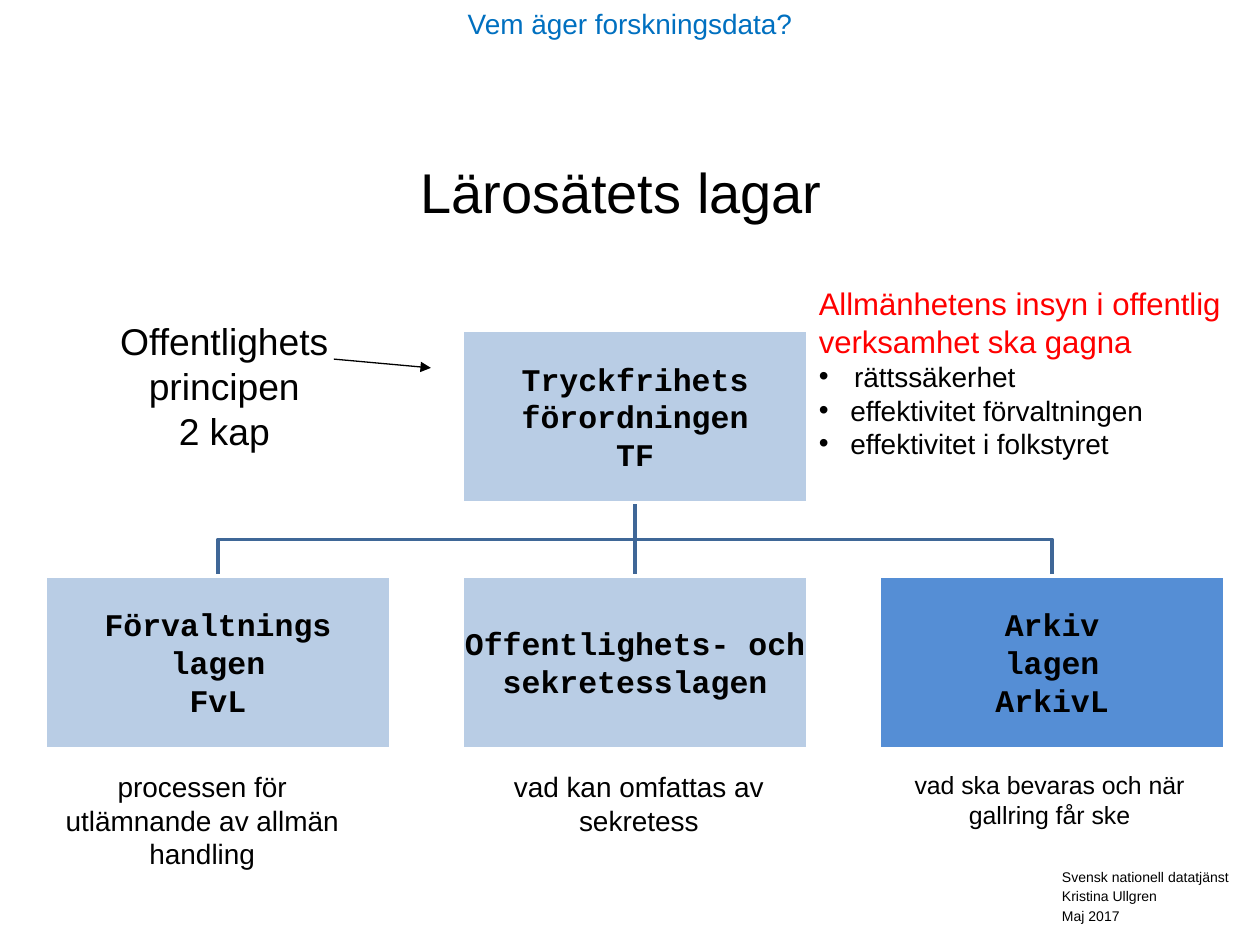
from pptx import Presentation, util as u
from pptx.dml.color import RGBColor
from pptx.enum import shapes, text
from pptx.oxml.ns import qn
from lxml import etree

BLACK, WHITE, RED, BLUE = "000000", "FFFFFF", "FF0000", "0070C0"
PALE, STRONG, BRANCH = "B9CDE5", "558ED5", "3F6797"
CENTER, LEFT = text.PP_ALIGN.CENTER, text.PP_ALIGN.LEFT


def color(value):
    """Turn a hex string into a colour."""
    return RGBColor.from_string(value)


class Page:
    """Hold the slide and draw each kind of element in one style."""

    def __init__(self, deck):
        """Add a title-only slide to the deck."""
        self.slide = deck.slides.add_slide(deck.slide_layouts[5])
        self.items = self.slide.shapes

    def font(self, para, size, ink=BLACK, name="Arial", bold=False):
        """Set the font of a paragraph."""
        para.font.size = u.Pt(size)
        para.font.name = name
        para.font.bold = bold
        para.font.color.rgb = color(ink)

    def fill_text(self, frame, lines, size, align=CENTER, gap=0, **style):
        """Fill a text frame with one paragraph a line."""
        frame.word_wrap = True
        for index, line in enumerate(lines):
            para = frame.add_paragraph() if index else frame.paragraphs[0]
            para.text = line
            para.alignment = align
            para.space_before = u.Pt(gap if index else 0)
            self.font(para, size, **style)

    def title(self, line, left, top, width, height, size):
        """Move and format the title placeholder."""
        box = self.items.title
        box.left, box.top = u.Inches(left), u.Inches(top)
        box.width, box.height = u.Inches(width), u.Inches(height)
        box.text_frame.vertical_anchor = text.MSO_ANCHOR.MIDDLE
        self.fill_text(box.text_frame, [line], size)

    def label(self, lines, left, top, width, height, size, **style):
        """Add a text box."""
        box = self.items.add_textbox(*map(u.Inches, (left, top, width, height)))
        self.fill_text(box.text_frame, lines, size, **style)
        return box.text_frame

    def bullet(self, frame, line, indent, size):
        """Append a bulleted paragraph."""
        para = frame.add_paragraph()
        para.text = line
        props = para._p.get_or_add_pPr()
        props.set("marL", str(u.Inches(indent)))
        props.set("indent", str(-u.Inches(indent)))
        etree.SubElement(props, qn("a:buFont")).set("typeface", "Arial")
        etree.SubElement(props, qn("a:buChar")).set("char", "•")
        self.font(para, size)

    def law(self, lines, left, top, width, height, fill):
        """Add a filled law box."""
        box = self.items.add_shape(
            shapes.MSO_SHAPE.RECTANGLE, *map(u.Inches, (left, top, width, height)))
        box.shadow.inherit = False
        box.fill.solid()
        box.fill.fore_color.rgb = color(fill)
        box.line.color.rgb = color(WHITE)
        box.line.width = u.Pt(2)
        frame = box.text_frame
        frame.margin_left = frame.margin_right = u.Inches(0.01)
        frame.margin_top = frame.margin_bottom = u.Inches(0.01)
        frame.vertical_anchor = text.MSO_ANCHOR.MIDDLE
        self.fill_text(frame, lines, 18, name="Courier New", bold=True)

    def line(self, start, end, ink, width, arrow=False):
        """Add a straight line, with an arrowhead if asked."""
        link = self.items.add_connector(
            shapes.MSO_CONNECTOR.STRAIGHT, *map(u.Inches, (*start, *end)))
        link.line.color.rgb = color(ink)
        link.line.width = u.Pt(width)
        props = link._element.spPr
        if arrow:
            etree.SubElement(props.find(qn("a:ln")), qn("a:tailEnd")).set("type", "triangle")
        etree.SubElement(props, qn("a:effectLst"))

    def elbow(self, points, ink, width):
        """Add an open bent line through the points."""
        first, *rest = [tuple(map(u.Inches, point)) for point in points]
        builder = self.items.build_freeform(*first)
        builder.add_line_segments(rest, close=False)
        bend = builder.convert_to_shape()
        bend.shadow.inherit = False
        bend.fill.background()
        bend.line.color.rgb = color(ink)
        bend.line.width = u.Pt(width)


def main():
    """Build the slide and save it."""
    deck = Presentation()
    deck.slide_width, deck.slide_height = u.Inches(10), u.Inches(7.5)
    page = Page(deck)
    page.title("Lärosätets lagar", 0, 1.22, 9.86, 0.6, 32)
    page.label(["Vem äger forskningsdata?"], 0, 0, 10, 0.67, 16, ink=BLUE)

    width, height, upper, lower = 2.74, 1.37, 2.62, 4.57
    columns = [0.36 + 3.31 * index for index in range(3)]
    centers = [left + width / 2 for left in columns]
    bottom = upper + height
    middle = (bottom + lower) / 2
    for center in (centers[0], centers[2]):
        page.elbow([(centers[1], bottom), (centers[1], middle),
                    (center, middle), (center, lower)], BRANCH, 2)
    page.line((centers[1], bottom), (centers[1], lower), BRANCH, 2)

    page.law(["Tryckfrihets", "förordningen", "TF"], columns[1], upper, width, height, PALE)
    laws = [
        (["Förvaltnings", "lagen", "FvL"], PALE),
        (["Offentlighets- och sekretesslagen"], PALE),
        (["Arkiv", "lagen", "ArkivL"], STRONG),
    ]
    for left, (lines, fill) in zip(columns, laws):
        page.law(lines, left, lower, width, height, fill)

    notes = [
        ("processen för utlämnande av allmän handling", 0.31, 2.59, 0.91, 16),
        ("vad kan omfattas av sekretess", 3.74, 2.66, 0.64, 16),
        ("vad ska bevaras och när gallring får ske", 7.1, 2.46, 0.58, 14.2),
    ]
    for line, left, span, tall, size in notes:
        page.label([line], left, 6.06, span, tall, size)

    page.label(["Offentlighets", "principen", "2 kap"], 0.66, 2.48, 2.24, 1.18, 21.3)
    page.line((2.65, 2.85), (3.42, 2.92), BLACK, 0.75, arrow=True)

    aims = page.label(["Allmänhetens insyn i offentlig verksamhet ska gagna"],
                      6.4, 2.21, 3.5, 1.81, 17.8, align=LEFT, ink=RED)
    for line, indent in [("rättssäkerhet", 0.28), ("effektivitet förvaltningen", 0.25),
                         ("effektivitet i folkstyret", 0.25)]:
        page.bullet(aims, line, indent, 16)

    page.label(["Svensk nationell datatjänst", "Kristina Ullgren", "Maj 2017"],
               8.33, 6.84, 1.67, 0.56, 8, align=LEFT, gap=1.6)
    deck.save("out.pptx")


if __name__ == "__main__":
    main()
